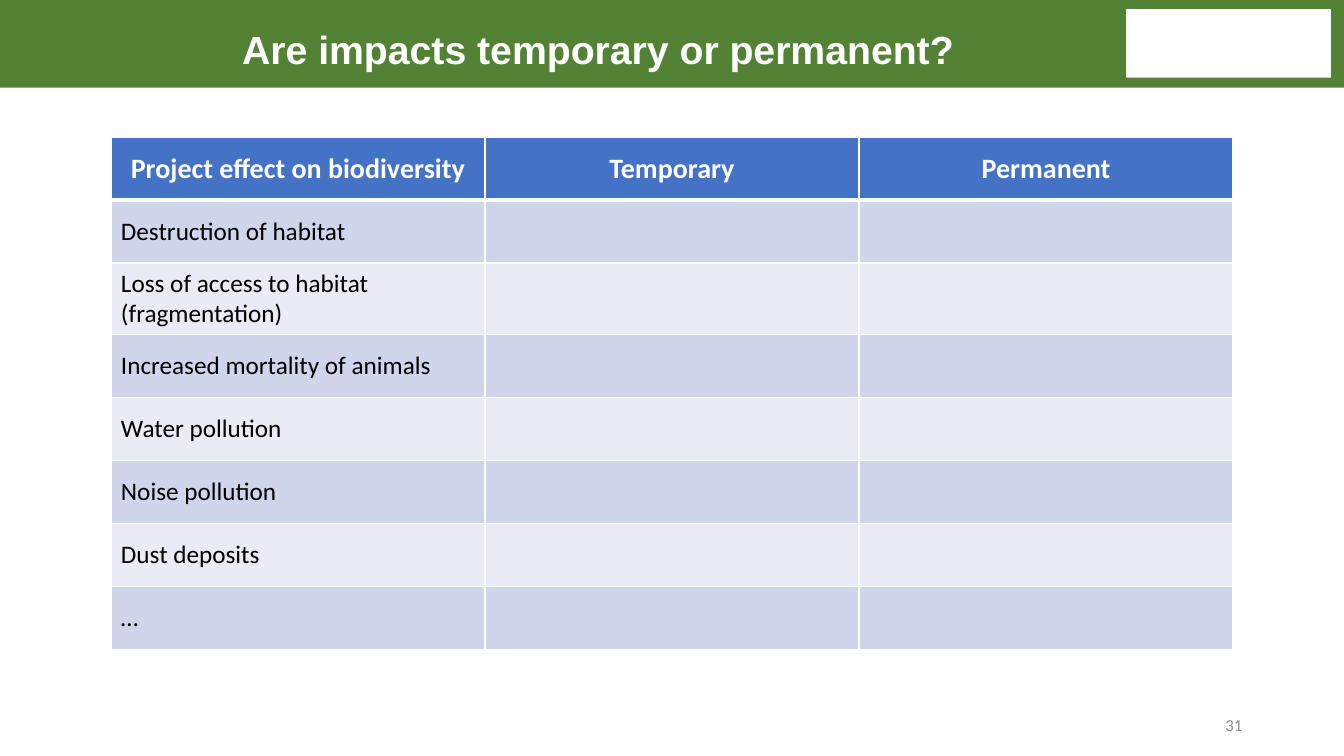
from dataclasses import dataclass

from lxml.etree import SubElement
from pptx import Presentation
from pptx.dml.color import RGBColor
from pptx.enum.shapes import MSO_SHAPE
from pptx.enum.text import MSO_ANCHOR, PP_ALIGN
from pptx.oxml.ns import qn
from pptx.slide import Slide
from pptx.table import _Cell
from pptx.text.text import TextFrame
from pptx.util import Inches, Pt

COLORS = {
    "white": "FFFFFF",
    "black": "000000",
    "green": "548235",
    "header": "4472C4",
    "odd_row": "CFD5EA",
    "even_row": "E9EBF5",
    "number": "8C8C8C",
}
HEADINGS = ["Project effect on biodiversity", "Temporary", "Permanent"]
EFFECTS = [
    "Destruction of habitat",
    "Loss of access to habitat (fragmentation)",
    "Increased mortality of animals",
    "Water pollution",
    "Noise pollution",
    "Dust deposits",
    "…",
]
COLUMN_WIDTH = 3.71
ROW_HEIGHT = 0.625


@dataclass(frozen=True)
class Block:
    left: float
    top: float
    width: float
    height: float
    color: str


@dataclass(frozen=True)
class TextStyle:
    size: float
    color: str
    font: str = "Calibri"
    bold: bool = False
    align: PP_ALIGN = PP_ALIGN.LEFT


BLOCKS = [
    Block(0, -0.03, 13.33, 0.9, "green"),
    Block(11.17, 0.09, 2.03, 0.68, "white"),
]
TITLE_STYLE = TextStyle(28, "white", "Arial", True, PP_ALIGN.CENTER)
HEADING_STYLE = TextStyle(20, "white", bold=True, align=PP_ALIGN.CENTER)
EFFECT_STYLE = TextStyle(18, "black")
NUMBER_STYLE = TextStyle(12, "number", align=PP_ALIGN.RIGHT)


def rgb(name: str) -> RGBColor:
    return RGBColor.from_string(COLORS[name])


def write_text(frame: TextFrame, text: str, style: TextStyle) -> None:
    frame.text = text
    frame.word_wrap = True
    frame.vertical_anchor = MSO_ANCHOR.MIDDLE
    paragraph = frame.paragraphs[0]
    paragraph.alignment = style.align
    font = paragraph.font
    if paragraph.runs:
        font = paragraph.runs[0].font
    font.name = style.font
    font.size = Pt(style.size)
    font.bold = style.bold
    font.color.rgb = rgb(style.color)


def add_block(slide: Slide, block: Block) -> None:
    shape = slide.shapes.add_shape(
        MSO_SHAPE.RECTANGLE, Inches(block.left), Inches(block.top),
        Inches(block.width), Inches(block.height))
    shape.shadow.inherit = False
    shape.fill.solid()
    shape.fill.fore_color.rgb = rgb(block.color)
    shape.line.fill.background()


def add_title(slide: Slide, text: str) -> None:
    """Fill the title placeholder and bring it in front of the band."""
    title = slide.shapes.title
    title.left, title.top = Inches(0.83), Inches(0.1)
    title.width, title.height = Inches(10.2), Inches(0.82)
    write_text(title.text_frame, text, TITLE_STYLE)
    title.text_frame.paragraphs[0].line_spacing = 0.9
    title.element.getparent().append(title.element)


def format_cell(cell: _Cell, fill: str, bottom_width: float) -> None:
    properties = cell._tc.get_or_add_tcPr()
    widths = {"a:lnL": 1, "a:lnR": 1, "a:lnT": 1, "a:lnB": bottom_width}
    for tag, width in widths.items():
        line = SubElement(properties, qn(tag), w=str(Pt(width)))
        line_fill = SubElement(line, qn("a:solidFill"))
        SubElement(line_fill, qn("a:srgbClr"), val=COLORS["white"])
    cell.fill.solid()
    cell.fill.fore_color.rgb = rgb(fill)
    cell.vertical_anchor = MSO_ANCHOR.MIDDLE


def add_effects_table(slide: Slide) -> None:
    rows = [HEADINGS] + [[effect, "", ""] for effect in EFFECTS]
    table = slide.shapes.add_table(
        len(rows), len(HEADINGS), Inches(1.1), Inches(1.36),
        Inches(COLUMN_WIDTH * len(HEADINGS)),
        Inches(ROW_HEIGHT * len(rows))).table
    for column in table.columns:
        column.width = Inches(COLUMN_WIDTH)
    for row_index, texts in enumerate(rows):
        table.rows[row_index].height = Inches(ROW_HEIGHT)
        is_header = row_index == 0
        band = "odd_row" if row_index % 2 else "even_row"
        for column_index, text in enumerate(texts):
            cell = table.cell(row_index, column_index)
            style = HEADING_STYLE if is_header else EFFECT_STYLE
            write_text(cell.text_frame, text, style)
            format_cell(cell, "header" if is_header else band,
                        3 if is_header else 1)


def add_slide_number(slide: Slide, number: str) -> None:
    box = slide.shapes.add_textbox(
        Inches(11.54), Inches(7.04), Inches(0.88), Inches(0.31))
    write_text(box.text_frame, number, NUMBER_STYLE)


def main() -> None:
    presentation = Presentation()
    presentation.slide_width = Inches(13.33)
    presentation.slide_height = Inches(7.5)
    slide = presentation.slides.add_slide(presentation.slide_layouts[5])
    add_slide_number(slide, "31")
    for block in BLOCKS:
        add_block(slide, block)
    add_title(slide, "Are impacts temporary or permanent?")
    add_effects_table(slide)
    presentation.save("out.pptx")


if __name__ == "__main__":
    main()
